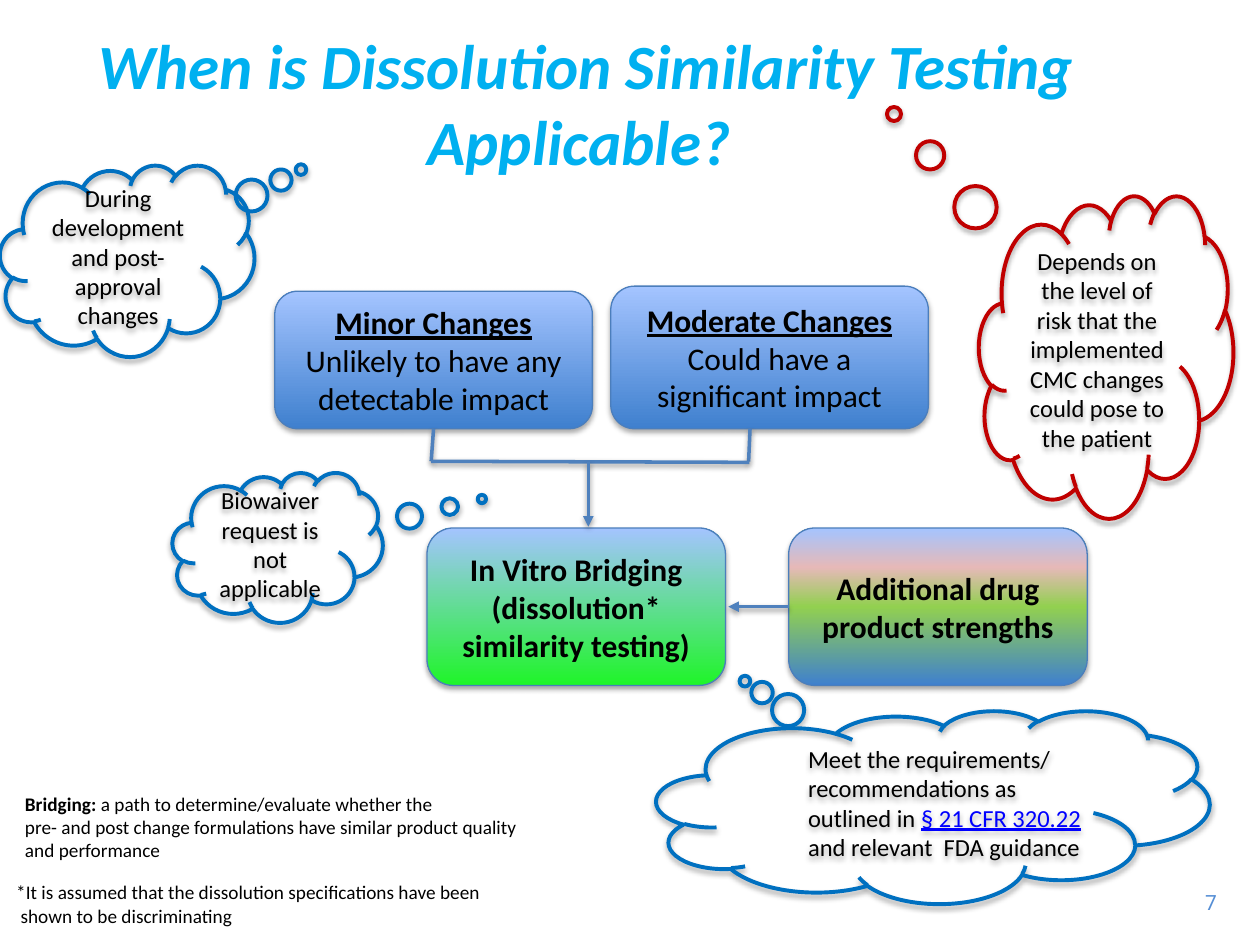
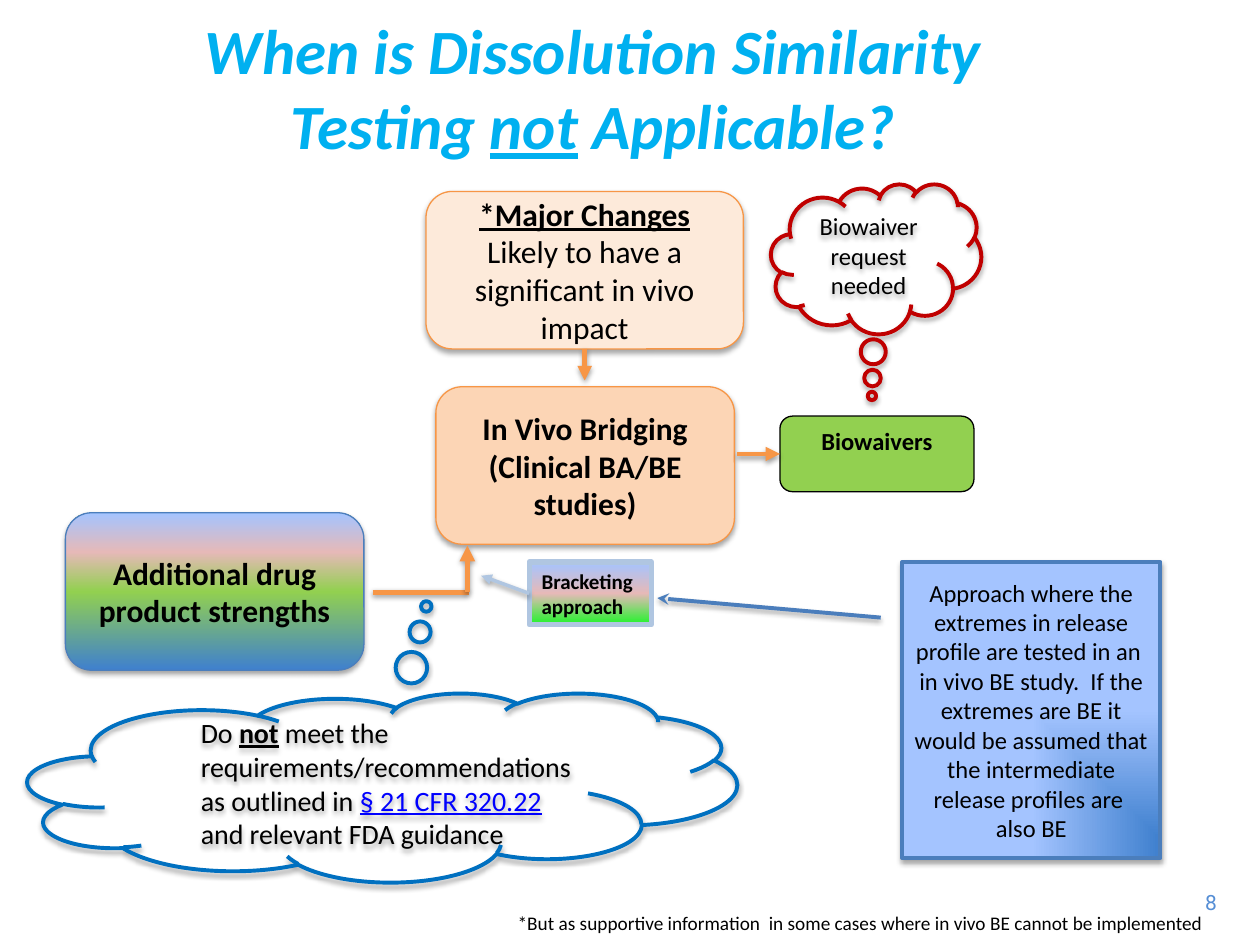
"""Build two slides on when dissolution similarity testing is applicable."""
import dataclasses

import lxml.etree
import pptx
import pptx.dml.color
import pptx.enum.shapes
import pptx.enum.text
import pptx.oxml.ns
import pptx.util

Pt = pptx.util.Pt
qn = pptx.oxml.ns.qn
SHAPE = pptx.enum.shapes.MSO_SHAPE
ALIGN = pptx.enum.text.PP_ALIGN
ANCHOR = pptx.enum.text.MSO_ANCHOR


@dataclasses.dataclass(frozen=True)
class Theme:
    """Colours, gradients, fonts and type sizes shared by the slides."""
    font: str = "Calibri"
    number_font: str = "Roboto"
    title: str = "00B0F0"
    text: str = "000000"
    link: str = "0000FF"
    number: str = "558ED5"
    edge: str = "4B7EBC"
    flow: str = "4F81BD"
    thought: str = "0070C0"
    risk: str = "C00000"
    major: str = "F79646"
    major_light: str = "FDEADA"
    major_mid: str = "FCD5B5"
    waiver: str = "92D050"
    bracket: str = "B0C6E1"
    blue: tuple = ((0, "3F80CE"), (100, "A4C4FF"))
    green: tuple = ((0, "1FF529"), (100, "A4C4FF"))
    strengths: tuple = ((0, "3F80CE"), (50, "92D050"), (75, "E6B9B8"), (100, "A4C4FF"))
    bracketing: tuple = ((0, "1FF529"), (50, "E6B9B8"), (100, "A4C4FF"))
    title_size: float = 36
    box_size: float = 18
    cloud_size: float = 14
    wide_cloud_size: float = 16
    small_size: float = 12
    note_size: float = 11


THEME = Theme()
STRENGTHS = [[("Additional drug product strengths", "b")]]
CFR = ("§ 21 CFR 320.22", "l")


def rgb(colour):
    """Turn a hex string into a colour value."""
    return pptx.dml.color.RGBColor.from_string(colour)


def sub(parent, tag, **attributes):
    """Append one XML child with the given attributes."""
    child = lxml.etree.SubElement(parent, qn(tag))
    for key, value in attributes.items():
        child.set(key, str(value))
    return child


def add_colour(parent, colour, alpha=None):
    """Append an RGB colour, optionally transparent."""
    node = sub(parent, "a:srgbClr", val=colour)
    if alpha:
        sub(node, "a:alpha", val=alpha * 1000)


def cast_shadow(effects, distance, alpha):
    """Put a soft shadow straight below the element."""
    shadow = sub(effects, "a:outerShdw", blurRad=Pt(3.1), dist=Pt(distance),
                 dir=5400000, rotWithShape=0)
    add_colour(shadow, THEME.text, alpha)


def paint(shape, fill, from_corner=False):
    """Fill a shape with nothing, one colour, or gradient stops from the bottom up."""
    if fill is None:
        shape.fill.background()
    elif isinstance(fill, str):
        shape.fill.solid()
        shape.fill.fore_color.rgb = rgb(fill)
    else:
        shape.fill.gradient()
        shape.fill.gradient_angle = 90
        gradient = shape._element.spPr.find(qn("a:gradFill"))
        stops = gradient.find(qn("a:gsLst"))
        for stop in list(stops):
            stops.remove(stop)
        for position, colour in fill:
            add_colour(sub(stops, "a:gs", pos=position * 1000), colour)
        if from_corner:
            gradient.remove(gradient.find(qn("a:lin")))
            focus = lxml.etree.Element(qn("a:path"))
            focus.set("path", "rect")
            sub(focus, "a:fillToRect", l=100000, t=100000)
            stops.addnext(focus)


def write(frame, paragraphs, size, align=ALIGN.LEFT, level=0, colour=THEME.text,
          font=THEME.font, flags=""):
    """Write runs; flags are b bold, i italic, u underline, l link, n new line before."""
    for index, runs in enumerate(paragraphs):
        paragraph = frame.paragraphs[0] if index == 0 else frame.add_paragraph()
        paragraph.alignment = align
        paragraph.level = level
        for text, own in runs:
            style = flags + own
            if "n" in style:
                paragraph.add_line_break()
            run = paragraph.add_run()
            run.text = text
            run.font.name = font
            run.font.size = Pt(size)
            run.font.bold = "b" in style
            run.font.italic = "i" in style
            run.font.underline = "u" in style or "l" in style
            run.font.color.rgb = rgb(THEME.link if "l" in style else colour)


def add_box(slide, place, paragraphs, fill, edge=THEME.edge, kind=SHAPE.ROUNDED_RECTANGLE,
            size=THEME.box_size, weight=0.75, align=ALIGN.CENTER, anchor=ANCHOR.MIDDLE,
            shadow=True, wrap=True, level=0, adjust=(), from_corner=False):
    """Draw an outlined shape with its text."""
    box = slide.shapes.add_shape(kind, *map(Pt, place))
    for index, value in enumerate(adjust):
        box.adjustments[index] = value
    paint(box, fill, from_corner)
    box.line.color.rgb = rgb(edge)
    box.line.width = Pt(weight)
    box.shadow.inherit = False
    if shadow:
        cast_shadow(box._element.spPr.find(qn("a:effectLst")), 1.8, 35)
    box.text_frame.word_wrap = wrap
    box.text_frame.vertical_anchor = anchor
    write(box.text_frame, paragraphs, size, align, level)
    return box


def add_cloud(slide, place, pointer, runs, colour=THEME.thought, **options):
    """Draw an unfilled thought cloud whose bubbles lead to the pointer."""
    settings = {"size": THEME.cloud_size, **options}
    return add_box(slide, place, [runs], None, colour, SHAPE.CLOUD_CALLOUT,
                   weight=2.25, adjust=pointer, **settings)


def add_tail(shape, kind):
    """Put an arrowhead at the end of a line."""
    sub(shape._element.spPr.find(qn("a:ln")), "a:tailEnd", type=kind)


def add_line(slide, start, end, colour=THEME.flow, weight=2, arrow=False,
             begin=None, finish=None):
    """Draw a straight line, joined to (shape, side) where given."""
    line = slide.shapes.add_connector(pptx.enum.shapes.MSO_CONNECTOR.STRAIGHT,
                                      *map(Pt, start + end))
    if begin:
        line.begin_connect(*begin)
    if finish:
        line.end_connect(*finish)
    line.line.color.rgb = rgb(colour)
    line.line.width = Pt(weight)
    if arrow:
        add_tail(line, "triangle")
    cast_shadow(sub(line._element.spPr, "a:effectLst"), 1.6, 38)


def add_note(slide, place, paragraphs, size=THEME.note_size, wrap=False, **style):
    """Add a plain text box."""
    note = slide.shapes.add_textbox(*map(Pt, place))
    note.text_frame.word_wrap = wrap
    write(note.text_frame, paragraphs, size, **style)


def add_slide(deck, number, title_corner, title_runs):
    """Start a slide with its title and number."""
    slide = deck.slides.add_slide(deck.slide_layouts[5])
    title = slide.shapes.title
    title.left, title.top = map(Pt, title_corner)
    title.width, title.height = Pt(670), Pt(73)
    title.text_frame.auto_size = pptx.enum.text.MSO_AUTO_SIZE.NONE
    title.text_frame.word_wrap = True
    title.text_frame.vertical_anchor = ANCHOR.MIDDLE
    write(title.text_frame, [title_runs], THEME.title_size, ALIGN.CENTER,
          colour=THEME.title, flags="bi")
    add_note(slide, (673, 504.7, 29.5, 21.6), [[(str(number), "")]], THEME.small_size,
             align=ALIGN.RIGHT, colour=THEME.number, font=THEME.number_font)
    return slide


def build_applicable(deck):
    """Build the slide on when testing applies."""
    slide = add_slide(deck, 7, (0, 22),
                      [("When is Dissolution Similarity Testing Applicable? ", "")])
    minor = add_box(slide, (157, 166.4, 181.5, 78.6),
                    [[("Minor Changes", "bu")],
                     [("Unlikely to have any detectable impact", "")]], THEME.blue)
    add_box(slide, (349, 163.5, 181.5, 81.5),
            [[("Moderate Changes", "bu")],
             [("Could have a significant impact", "")]], THEME.blue)
    add_box(slide, (244, 301.7, 170.6, 90),
            [[("In Vitro Bridging", "b")],
             [("(dissolution* similarity testing)", "b")]], THEME.green)
    strengths = add_box(slide, (450.7, 301.7, 170.6, 90), STRENGTHS, THEME.strengths)

    add_line(slide, (247.7, 245), (246.4, 263.6), begin=(minor, 2))
    add_line(slide, (428.6, 245), (427.8, 263.8))
    add_line(slide, (246.4, 263.6), (428.2, 264.2))
    add_line(slide, (336.2, 264), (336.2, 301), arrow=True)
    add_line(slide, (450.7, 346.7), (416.2, 346.7), arrow=True, begin=(strengths, 1))

    add_cloud(slide, (98.6, 270, 120.2, 85.7), (0.971, -0.323),
              [("Biowaiver request is not applicable", "")])
    add_cloud(slide, (375.1, 406.1, 316.1, 110.2), (-0.34, -0.653),
              [("Meet the requirements/ recommendations as outlined in ", ""), CFR,
               (" and relevant  FDA guidance", "")], align=ALIGN.LEFT, level=1)
    add_cloud(slide, (559.4, 111.6, 145.4, 184.3), (-0.834, -0.752),
              [("Depends on the level of risk that the implemented CMC changes "
                "could pose to the patient", "")], THEME.risk)
    add_cloud(slide, (0, 94.3, 145.4, 109.4), (0.683, -0.476),
              [("During development and post-approval changes", "")])

    add_note(slide, (7.2, 449.3, 316, 47.5),
             [[("Bridging: ", "b"), ("a path to determine/evaluate whether the", "")],
              [("pre- and post change formulations have similar product quality", "")],
              [("and performance", "")]], wrap=True)
    add_note(slide, (2.2, 499.7, 288, 34),
             [[("*It is assumed that the dissolution specifications have been", "")],
              [(" shown to be discriminating", "")]])


def build_not_applicable(deck):
    """Build the slide on when testing does not apply."""
    slide = add_slide(deck, 8, (8, 13),
                      [("When is Dissolution Similarity ", ""), ("Testing ", "n"),
                       ("not", "u"), (" Applicable? ", "")])
    major = add_box(slide, (243.4, 109.4, 181.4, 90),
                    [[("*Major Changes", "bu")],
                     [("Likely to have a significant in vivo impact", "")]],
                    THEME.major_light, THEME.major)
    add_box(slide, (249.1, 221, 170.6, 90),
            [[("In Vivo Bridging", "b")], [("(Clinical BA/BE studies)", "b")]],
            THEME.major_mid, THEME.major)
    bracketing = add_box(slide, (302.4, 321.1, 69.8, 36),
                         [[("Bracketing", "b")], [("approach", "b")]], THEME.bracketing,
                         THEME.bracket, SHAPE.RECTANGLE, THEME.small_size, 3,
                         ALIGN.LEFT, ANCHOR.TOP, shadow=False, wrap=False)
    add_box(slide, (37.4, 293, 170.6, 90), STRENGTHS, THEME.strengths)
    waivers = add_box(slide, (445.7, 237.8, 110.9, 43.2), [[("Biowaivers", "b")]],
                      THEME.waiver, THEME.text, size=THEME.cloud_size,
                      anchor=ANCHOR.TOP, shadow=False)

    add_line(slide, (213, 338.4), (267.8, 338.4), THEME.major, 3)
    add_line(slide, (267.1, 338.4), (267.1, 311.8), THEME.major, 3, True)
    add_line(slide, (334.1, 199.4), (334.1, 217.4), THEME.major, 2.75, True,
             begin=(major, 2))
    add_line(slide, (421.2, 259.4), (445.7, 259.4), THEME.major, 2.75, True,
             finish=(waivers, 1))
    add_line(slide, (302.4, 339.1), (275, 329), THEME.bracket, arrow=True,
             begin=(bracketing, 1))

    add_cloud(slide, (15.8, 396, 405.4, 108), (0.062, -0.958),
              [("Do ", ""), ("not", "bu"),
               (" meet the requirements/recommendations as outlined in ", ""), CFR,
               (" and relevant FDA guidance", "")],
              size=THEME.wide_cloud_size, align=ALIGN.LEFT, level=1)
    add_cloud(slide, (440.6, 105.1, 120.2, 85.7), (-0.02, 0.914),
              [("Biowaiver request needed", "")], THEME.risk)
    approach = add_box(slide, (515.5, 321.1, 147.6, 169.2),
                       [[("Approach where the extremes in release profile are tested in an "
                          " in vivo BE study.  If the extremes are BE it would be assumed "
                          "that the intermediate release profiles are  also BE", "")]],
                       THEME.blue, kind=SHAPE.LINE_CALLOUT_1, size=THEME.cloud_size,
                       weight=2.25, adjust=(0.188, -0.083, 0.122, -0.948),
                       from_corner=True)
    add_tail(approach, "stealth")
    add_note(slide, (288.7, 517, 412.6, 20.9),
             [[("*But as supportive information  in some cases where in vivo BE "
                "cannot be implemented", "")]])


def main():
    """Build and save the deck."""
    deck = pptx.Presentation()
    deck.slide_width, deck.slide_height = Pt(720), Pt(540)
    build_applicable(deck)
    build_not_applicable(deck)
    deck.save("out.pptx")


if __name__ == "__main__":
    main()
